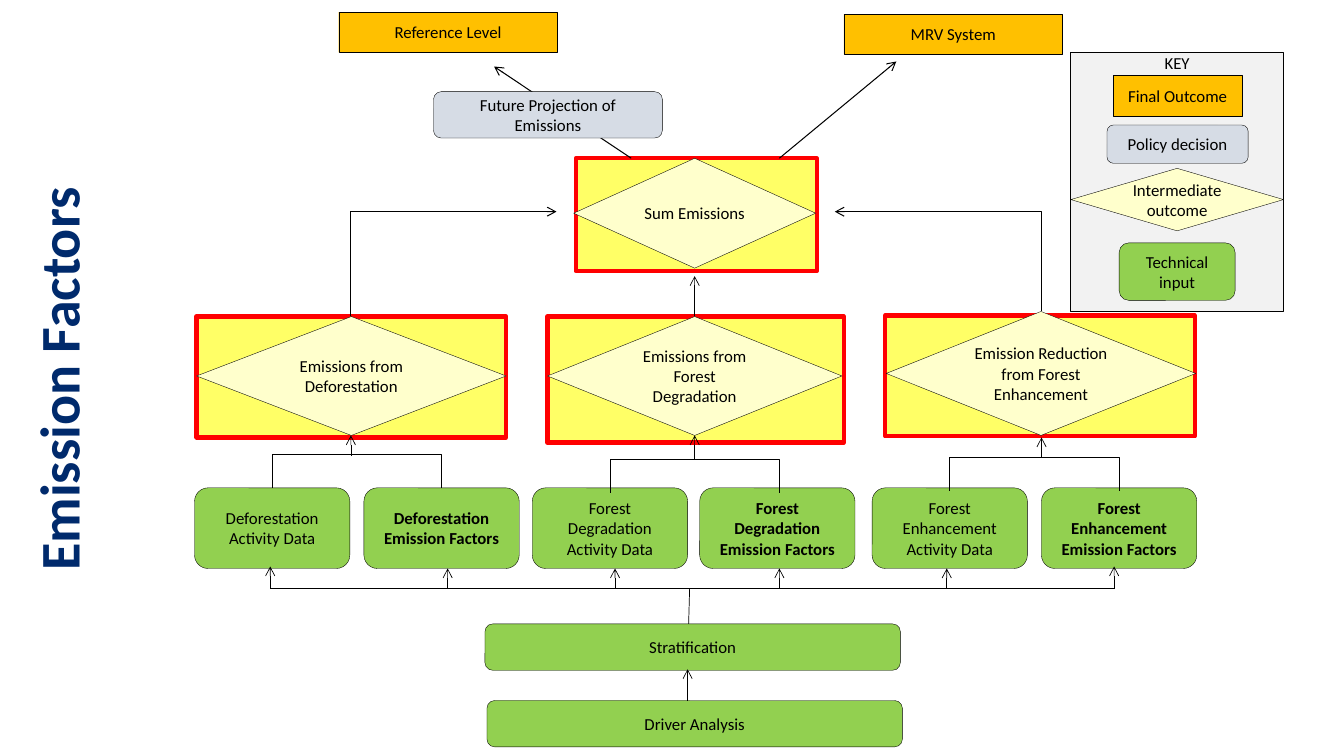
from lxml.etree import SubElement
from pptx import Presentation
from pptx.dml.color import RGBColor
from pptx.enum.shapes import MSO_CONNECTOR, MSO_SHAPE
from pptx.enum.text import MSO_ANCHOR, MSO_AUTO_SIZE, PP_ALIGN
from pptx.oxml.ns import qn
from pptx.util import Inches, Pt

FONT = "Calibri"
BLACK = RGBColor(0x00, 0x00, 0x00)
NAVY = RGBColor(0x00, 0x2A, 0x6C)
RED = RGBColor(0xFF, 0x00, 0x00)
YELLOW = RGBColor(0xFF, 0xFF, 0x66)
CREAM = RGBColor(0xFF, 0xFF, 0xCC)
ORANGE = RGBColor(0xFF, 0xC0, 0x00)
BLUE_GREY = RGBColor(0xD6, 0xDC, 0xE5)
GREEN = RGBColor(0x92, 0xD0, 0x50)
LIGHT_GREY = RGBColor(0xF2, 0xF2, 0xF2)

# Content: every box is (left, top, width, height) in inches
TITLE = "Emission Factors"
STYLES = {
    "outcome": (MSO_SHAPE.RECTANGLE, ORANGE),
    "policy": (MSO_SHAPE.ROUNDED_RECTANGLE, BLUE_GREY),
    "intermediate": (MSO_SHAPE.FLOWCHART_DECISION, CREAM),
    "input": (MSO_SHAPE.ROUNDED_RECTANGLE, GREEN),
}
HIGHLIGHTS = [(1.95, 3.14, 3.07, 1.2), (5.43, 3.14, 2.94, 1.25),
              (8.78, 3.13, 3.07, 1.2), (5.71, 1.57, 2.39, 1.12)]
RESULTS = [
    ("Sum Emissions", "intermediate", (5.69, 1.57, 2.4, 1.09)),
    ("Reference Level", "outcome", (3.36, 0.12, 2.17, 0.4)),
    ("MRV System", "outcome", (8.37, 0.14, 2.17, 0.4)),
]
FOUNDATIONS = [
    ("Future Projection of Emissions", "policy", (4.3, 0.91, 2.27, 0.46)),
    ("Stratification", "input", (4.81, 6.19, 4.12, 0.46)),
    ("Driver Analysis", "input", (4.83, 6.95, 4.12, 0.46)),
]
# Branch: outcome, its box, subject, lefts of the two inputs,
# bracket (centre, top), arrow into the outcome (x, from, to)
BRANCHES = [
    ("Emissions from Deforestation", (1.95, 3.14, 3.07, 1.18),
     "Deforestation", (1.93, 3.61), (3.54, 4.51), (3.48, 4.52, 4.32)),
    ("Emissions from Forest Degradation", (5.43, 3.14, 2.92, 1.18),
     "Forest Degradation", (5.28, 6.94), (6.89, 4.56), (6.89, 4.56, 4.32)),
    ("Emission Reduction from Forest Enhancement", (8.79, 3.09, 3.07, 1.23),
     "Forest Enhancement", (8.65, 10.33), (10.26, 4.54), (10.33, 4.54, 4.34)),
]
INPUT_TOP, INPUT_WIDTH, INPUT_HEIGHT = 4.84, 1.54, 0.8
BRACKET_HALF, BRACKET_HEIGHT = 0.84, 0.33
RAIL_Y = 5.84
RAIL_ARROWS = [(2.68, 5.62), (4.44, 5.64), (6.1, 5.64),
               (7.73, 5.64), (9.39, 5.64), (11.05, 5.62)]
KEY_BOX = (10.62, 0.52, 2.11, 2.57)
KEY = [
    ("Final Outcome", "outcome", (11.04, 0.75, 1.28, 0.4)),
    ("Policy decision", "policy", (10.98, 1.24, 1.4, 0.38)),
    ("Intermediate outcome", "intermediate", (10.62, 1.67, 2.11, 0.62)),
    ("Technical input", "input", (11.1, 2.41, 1.15, 0.57)),
]
TIGHT = {"Intermediate outcome", "Emission Reduction from Forest Enhancement"}

presentation = Presentation()
presentation.slide_width = Inches(13.33)
presentation.slide_height = Inches(7.5)
slide = presentation.slides.add_slide(presentation.slide_layouts[5])


def add_box(geometry, box, fill, line=BLACK, weight=0.25):
    shape = slide.shapes.add_shape(geometry, *map(Inches, box))
    shape.shadow.inherit = False
    shape.fill.solid()
    shape.fill.fore_color.rgb = fill
    shape.line.color.rgb = line
    shape.line.width = Pt(weight)
    return shape


def write(shape, text, size=12, color=BLACK, bold=False):
    frame = shape.text_frame
    frame.word_wrap = True
    frame.vertical_anchor = MSO_ANCHOR.MIDDLE
    frame.text = text
    paragraph = frame.paragraphs[0]
    paragraph.alignment = PP_ALIGN.CENTER
    font = paragraph.font
    font.name, font.size, font.bold = FONT, Pt(size), bold
    font.color.rgb = color
    return frame


def add_step(text, style, box, bold=False):
    frame = write(add_box(STYLES[style][0], box, STYLES[style][1]), text, bold=bold)
    if text in TIGHT:
        frame.margin_left = frame.margin_right = 0


def add_line(start, end, weight=0.5, arrow=None, kind=MSO_CONNECTOR.STRAIGHT):
    connector = slide.shapes.add_connector(kind, *map(Inches, (*start, *end)))
    connector.line.color.rgb = BLACK
    connector.line.width = Pt(weight)
    if arrow:
        SubElement(connector.line._get_or_add_ln(), qn(f"a:{arrow}"), type="arrow")
    SubElement(connector._element.spPr, qn("a:effectLst"))
    return connector


def add_elbow(start, end, weight=0.5, arrow=None):
    """One bend: horizontal from the start, then vertical to the end."""
    connector = add_line(start, end, weight, arrow, MSO_CONNECTOR.ELBOW)
    connector._element.spPr.find(qn("a:prstGeom")).set("prst", "bentConnector2")


# Vertical title
title = slide.shapes.title
title.left, title.top, title.width, title.height = map(Inches, (-3.03, 3.17, 7.28, 1.18))
title.rotation = 270
write(title, TITLE, 40, NAVY, True).auto_size = MSO_AUTO_SIZE.NONE
title.text_frame.paragraphs[0].line_spacing = 0.9

# Highlighted backgrounds
for box in HIGHLIGHTS:
    add_box(MSO_SHAPE.RECTANGLE, box, YELLOW, RED, 3)

# Results and the arrows around them
for step in RESULTS:
    add_step(*step)
add_line((7.73, 1.57), (8.89, 0.61), 0.75, "tailEnd")
add_line((6.26, 1.57), (4.9, 0.66), 0.75, "tailEnd")
add_elbow((5.52, 2.1), (3.48, 3.14), 0.75, "headEnd")
add_elbow((8.28, 2.1), (10.33, 3.09), 0.75, "headEnd")
add_line((6.89, 3.14), (6.89, 2.74), arrow="tailEnd")
for step in FOUNDATIONS:
    add_step(*step)

# Branches: outcome, two inputs, bracket and arrow
for outcome, box, subject, lefts, (centre, top), (x, start, end) in BRANCHES:
    add_step(outcome, "intermediate", box)
    for left, suffix, bold, side in zip(
            lefts, ("Activity Data", "Emission Factors"), (False, True), (-1, 1)):
        add_step(f"{subject} {suffix}", "input",
                 (left, INPUT_TOP, INPUT_WIDTH, INPUT_HEIGHT), bold)
        add_elbow((centre, top), (centre + side * BRACKET_HALF, top + BRACKET_HEIGHT))
    add_line((x, start), (x, end), arrow="tailEnd")

# Rail from stratification up to the inputs
for x, tip in RAIL_ARROWS:
    add_line((x, RAIL_Y), (x, tip), arrow="tailEnd")
add_line((RAIL_ARROWS[0][0], RAIL_Y), (RAIL_ARROWS[-1][0], RAIL_Y))
add_line((6.82, 6.95), (6.82, 6.64), arrow="tailEnd")
add_line((6.83, 6.19), (6.84, RAIL_Y))

# Key
key_frame = write(add_box(MSO_SHAPE.RECTANGLE, KEY_BOX, LIGHT_GREY, weight=1), "KEY")
key_frame.vertical_anchor = MSO_ANCHOR.TOP
key_frame.margin_top = 0
for step in KEY:
    add_step(*step)

presentation.save("out.pptx")
